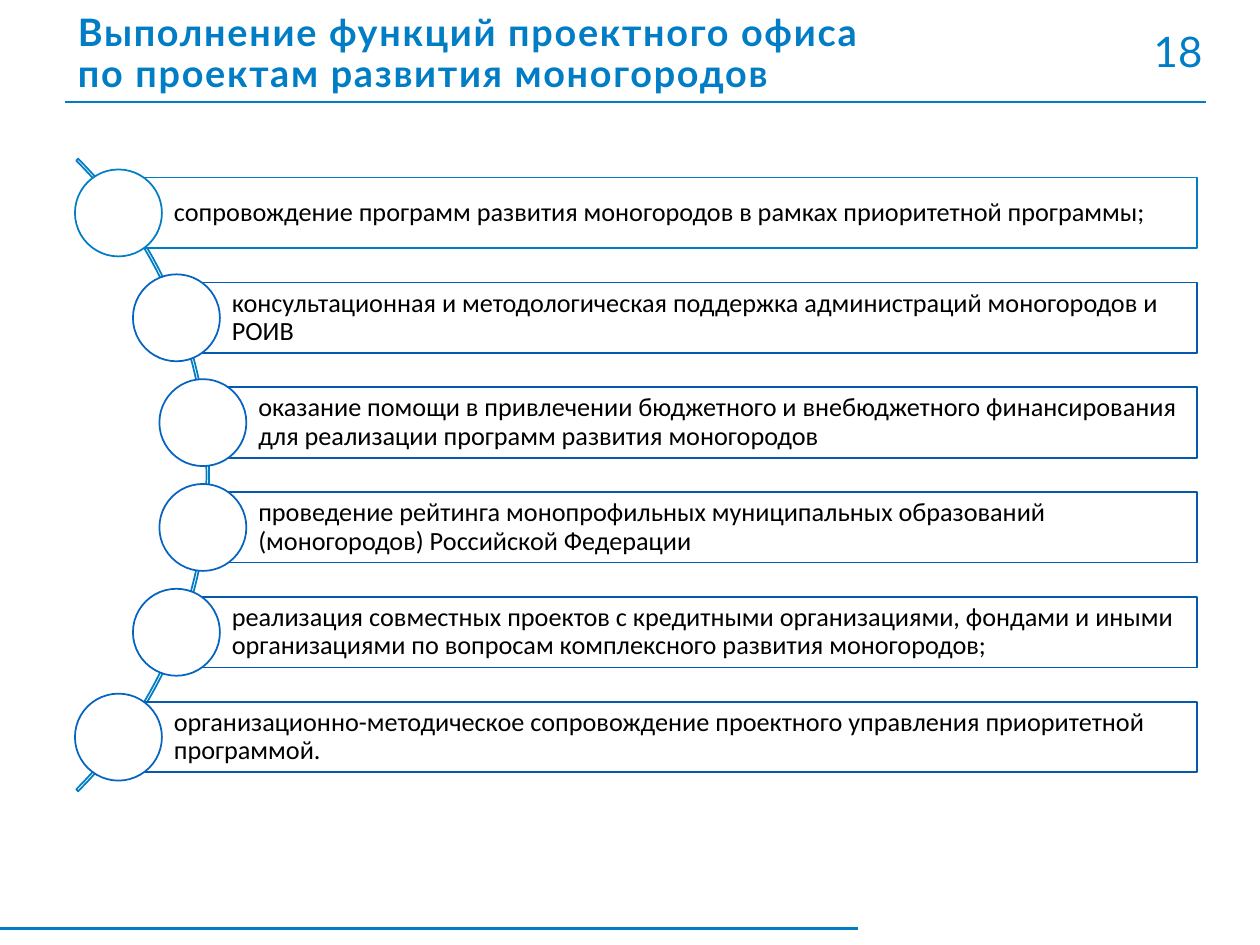
from lxml.etree import SubElement
from pptx import Presentation
from pptx.dml.color import RGBColor
from pptx.enum.shapes import MSO_CONNECTOR, MSO_SHAPE as SHAPE
from pptx.enum.text import MSO_ANCHOR as ANCHOR, PP_ALIGN as ALIGN
from pptx.oxml.ns import qn
from pptx.util import Inches, Pt

BLUE = RGBColor(0x00, 0x7D, 0xC5)
DEEP_BLUE = RGBColor(0x05, 0x5A, 0xAF)
LINK_BLUE = RGBColor(0x05, 0x63, 0xC1)
WHITE = RGBColor(0xFF, 0xFF, 0xFF)
BLACK = RGBColor(0x00, 0x00, 0x00)

HEADING_FONT = "Lato"
BODY_FONT = "Calibri"

FUNCTIONS = [
    "сопровождение программ развития моногородов в рамках приоритетной программы;",
    "консультационная и методологическая поддержка администраций моногородов и РОИВ",
    "оказание помощи в привлечении бюджетного и внебюджетного финансирования "
    "для реализации программ развития моногородов",
    "проведение рейтинга монопрофильных муниципальных образований "
    "(моногородов) Российской Федерации",
    "реализация совместных проектов с кредитными организациями, фондами и иными "
    "организациями по вопросам комплексного развития моногородов;",
    "организационно-методическое сопровождение проектного управления "
    "приоритетной программой.",
]
BAR_LEFTS = [0.94, 1.4, 1.61, 1.61, 1.4, 0.94]
BAR_RIGHT = 9.5
BAR_HEIGHT = 0.56
CIRCLE_SIZE = 0.69
FIRST_CENTER, LAST_CENTER = 1.69, 5.85


class SlideBuilder:
    def __init__(self, slide):
        self.slide = slide

    def rule(self, left, right, y, width):
        line = self.slide.shapes.add_connector(
            MSO_CONNECTOR.STRAIGHT, Inches(left), Inches(y), Inches(right), Inches(y))
        line.line.color.rgb = BLUE
        line.line.width = Pt(width)
        SubElement(line.element.spPr, qn("a:effectLst"))

    def shape(self, preset, left, top, width, height, outline, fill=WHITE):
        shape = self.slide.shapes.add_shape(
            preset, Inches(left), Inches(top), Inches(width), Inches(height))
        shape.shadow.inherit = False
        if fill is None:
            shape.fill.background()
        else:
            shape.fill.solid()
            shape.fill.fore_color.rgb = fill
        shape.line.color.rgb = outline
        shape.line.width = Pt(1)
        return shape

    def set_text(self, shape, text, font, size, color, align=ALIGN.LEFT, bold=False, spacing=0):
        """Fill a shape with one paragraph; spacing is in points between letters."""
        frame = shape.text_frame
        frame.word_wrap = True
        frame.vertical_anchor = ANCHOR.MIDDLE
        frame.text = text
        paragraph = frame.paragraphs[0]
        paragraph.alignment = align
        paragraph.line_spacing = 0.9
        for run in paragraph.runs:
            run.font.name = font
            run.font.size = Pt(size)
            run.font.bold = bold
            run.font.color.rgb = color
            if spacing:
                run.font._element.set("spc", str(spacing * 100))
        return frame

    def heading(self, text, left, top, width, height, size, **style):
        box = self.slide.shapes.add_textbox(
            Inches(left), Inches(top), Inches(width), Inches(height))
        self.set_text(box, text, HEADING_FONT, size, BLUE, **style)

    def arc(self, left, top, size):
        arc = self.shape(SHAPE.BLOCK_ARC, left, top, size, size, BLUE, fill=None)
        for index, value in enumerate((189, 27, 0.003)):
            arc.adjustments[index] = value

    def function_bar(self, text, left, center, bar_color, circle_color):
        bar = self.shape(SHAPE.RECTANGLE, left, center - BAR_HEIGHT / 2,
                         BAR_RIGHT - left, BAR_HEIGHT, bar_color)
        frame = self.set_text(bar, text, BODY_FONT, 15, BLACK)
        frame.margin_left = Inches(0.44)
        frame.margin_top = frame.margin_right = frame.margin_bottom = Inches(0.04)
        self.shape(SHAPE.OVAL, left - CIRCLE_SIZE / 2, center - CIRCLE_SIZE / 2,
                   CIRCLE_SIZE, CIRCLE_SIZE, circle_color)


def main():
    deck = Presentation()
    deck.slide_width, deck.slide_height = Inches(10), Inches(7.5)
    builder = SlideBuilder(deck.slides.add_slide(deck.slide_layouts[6]))

    builder.rule(0, 6.81, 7.37, 1.77)
    builder.rule(0.52, 9.57, 0.81, 1)
    builder.heading("Выполнение функций проектного офиса \vпо проектам развития моногородов",
                    0.52, 0.14, 8.4, 0.59, 21.6, bold=True, spacing=1)
    builder.heading("18", 9.03, 0.13, 0.64, 0.59, 24, align=ALIGN.CENTER)

    builder.arc(-5.44, 0.22, 7.1)
    pitch = (LAST_CENTER - FIRST_CENTER) / (len(FUNCTIONS) - 1)
    for index, (text, left) in enumerate(zip(FUNCTIONS, BAR_LEFTS)):
        colors = (DEEP_BLUE, LINK_BLUE) if index else (BLUE, BLUE)
        builder.function_bar(text, left, FIRST_CENTER + index * pitch, *colors)

    deck.save("out.pptx")


if __name__ == "__main__":
    main()
